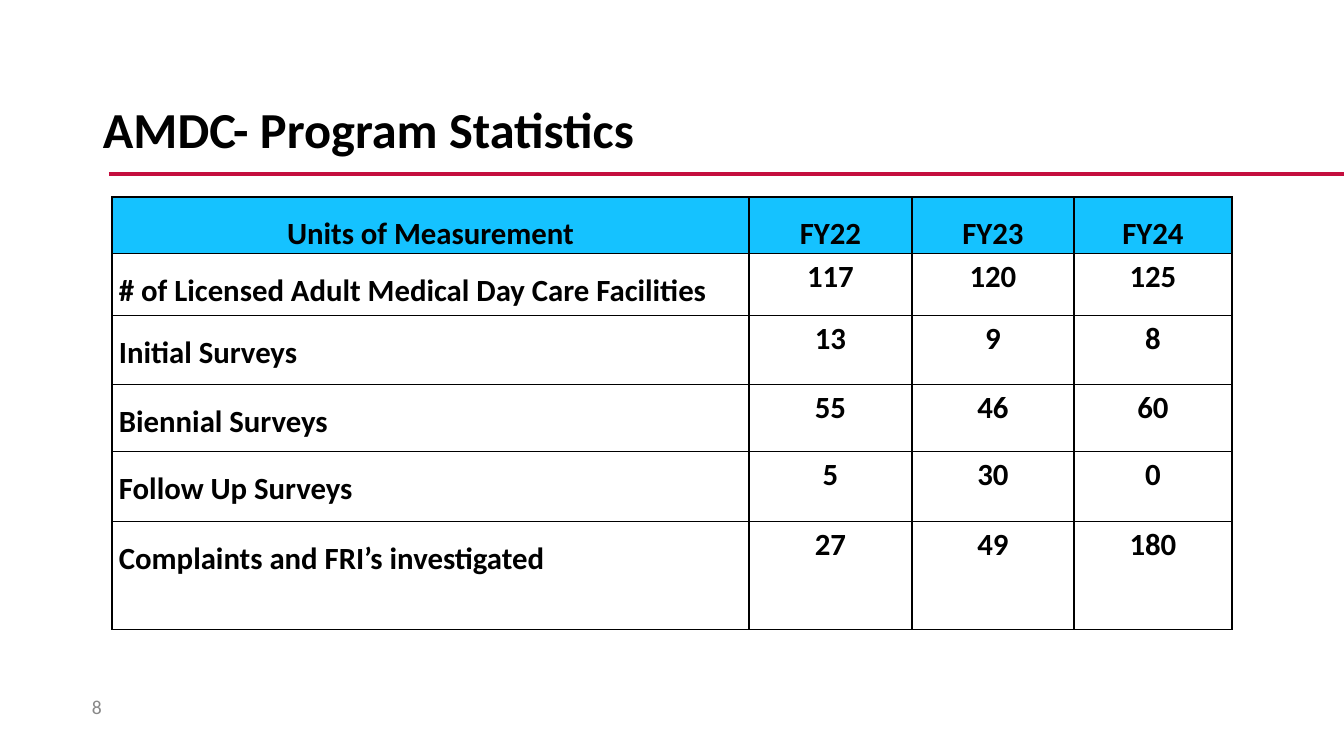
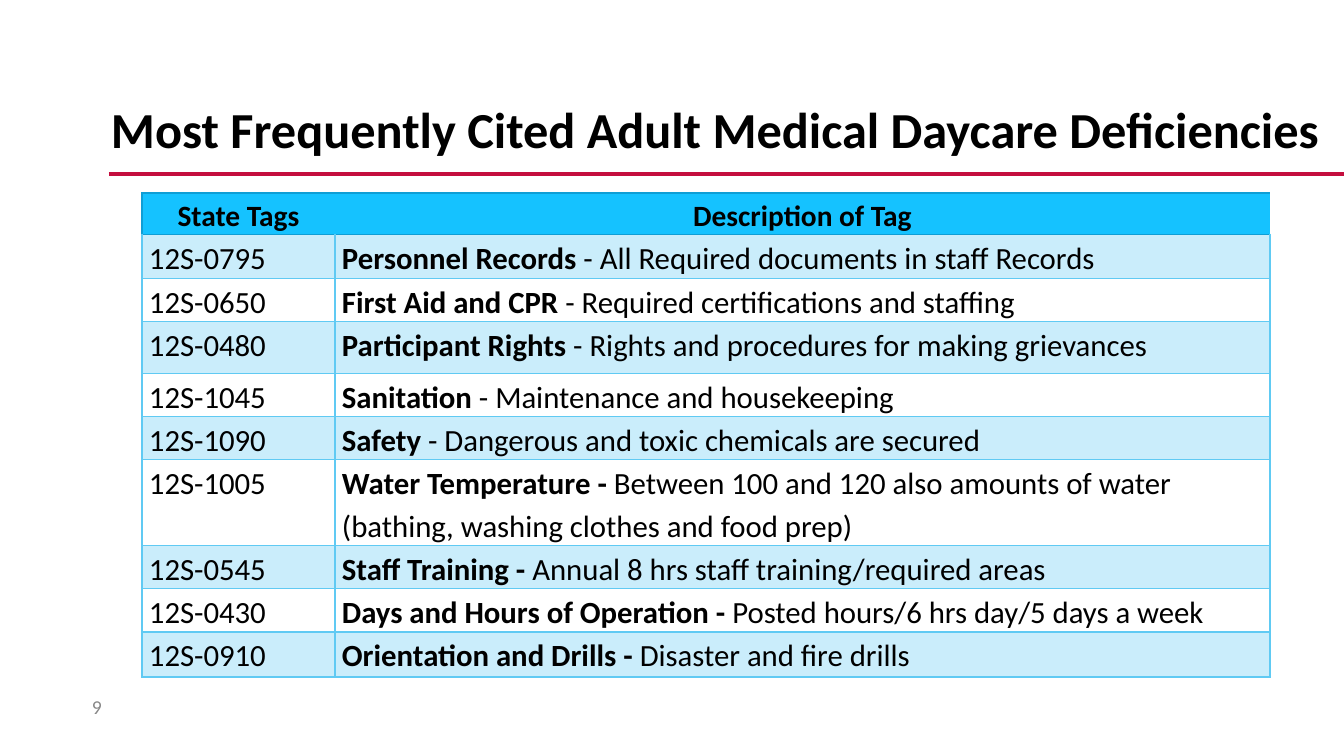
"""Build two slides of adult medical day care figures and deficiencies."""
from dataclasses import dataclass
from lxml.etree import SubElement as Sub
from pptx import Presentation
from pptx.dml.color import RGBColor as RGB
from pptx.enum.shapes import MSO_CONNECTOR as Link
from pptx.enum.text import MSO_ANCHOR as Anchor, MSO_AUTO_SIZE as Fit, PP_ALIGN as Align
from pptx.oxml.ns import qn
from pptx.util import Emu, Pt


@dataclass(frozen=True)
class Theme:
    """Hold the shared colours and type sizes."""
    font: str = "Calibri"
    ink: str = "000000"
    grey: str = "888888"
    red: str = "C40E3E"
    white: str = "FFFFFF"
    head: str = "15C2FF"
    band: str = "CAEDFB"
    edge: str = "60CAF3"
    rim: str = "0F9ED5"
    title: int = 36
    body: int = 22
    label: int = 21
    small: int = 14


THEME = Theme()
WIDE, HIGH = 1344, 756
RULE = (109, 174, WIDE, 174)
FOOT = (82, 687, 49, 40)
SLIM, ROOMY = (7, 0), (10, 5)

STATS = [
    ("Units of Measurement", "FY22", "FY23", "FY24"),
    ("# of Licensed Adult Medical Day Care Facilities", "117", "120", "125"),
    ("Initial Surveys", "13", "9", "8"),
    ("Biennial Surveys", "55", "46", "60"),
    ("Follow Up Surveys", "5", "30", "0"),
    ("Complaints and FRI’s investigated", "27", "49", "180"),
]
TAGS = [
    ("12S-0795", "Personnel Records ", "- All Required documents in staff Records"),
    ("12S-0650", "First Aid and CPR", " - Required certifications and staffing"),
    ("12S-0480", "Participant Rights", " - Rights and procedures for making grievances"),
    ("12S-1045", "Sanitation", " - Maintenance and housekeeping"),
    ("12S-1090", "Safety ", "- Dangerous and toxic chemicals are secured"),
    ("12S-1005", "Water Temperature - ",
     "Between 100 and 120 also amounts of water (bathing, washing clothes and food prep)"),
    ("12S-0545", "Staff Training - ", "Annual 8 hrs staff training/required areas"),
    ("12S-0430", "Days and Hours of Operation - ", "Posted hours/6 hrs day/5 days a week"),
    ("12S-0910", "Orientation and Drills - ", "Disaster and fire drills"),
]
SLIDES = [
    dict(title="AMDC- Program Statistics", box=(93, 77, 1159, 110), num="8",
         cells=[[(text, "") for text in row] for row in STATS],
         at=(112, 197), cols=(637, 163, 162, 158), rows=(56, 62, 69, 67, 70, 108),
         head=THEME.body, space=1.5, figs=True, band=THEME.white,
         edge=THEME.ink, rim=THEME.ink, outer=1.5, open=False),
    dict(title="Most Frequently Cited Adult Medical Daycare Deficiencies",
         box=(101, 77, 1233, 110), num="9",
         cells=[[("State Tags", ""), ("Description of Tag", "")]]
         + [[("", tag), (name, note)] for tag, name, note in TAGS],
         at=(142, 193), cols=(193, 935), rows=(41, 44, 43, 52, 43, 43, 86, 43, 43, 45),
         head=THEME.label, space=1.15, figs=False, band=THEME.band,
         edge=THEME.edge, rim=THEME.rim, outer=1, open=True),
]


def px(num):
    """Turn px into EMU."""
    return Emu(round(num * 914400 / 100.8))


def put(item, **vals):
    """Set attributes from format values."""
    for key, val in vals.items():
        setattr(item, key, val)


def write(para, runs, size, color, align=Align.LEFT, space=None):
    """Fill a paragraph with (text, bold) runs."""
    put(para, alignment=align, line_spacing=space)
    for text, bold in runs:
        if text:
            run = para.add_run()
            run.text = text
            put(run.font, name=THEME.font, size=Pt(size), bold=bold)
            run.font.color.rgb = RGB.from_string(color)


def frame(shape, box, wrap=True):
    """Place a text shape and return its first paragraph."""
    put(shape, **dict(zip(("left", "top", "width", "height"), map(px, box))))
    text = shape.text_frame
    put(text, word_wrap=wrap, auto_size=Fit.NONE, vertical_anchor=Anchor.MIDDLE,
        margin_left=px(10), margin_right=px(10), margin_top=px(5), margin_bottom=px(5))
    return text.paragraphs[0]


def border(cell, row, col, data):
    """Draw the four sides of a table cell."""
    props = cell._tc.get_or_add_tcPr()
    last = len(data["cols"]) - 1
    outer = {"L": col == 0, "R": col == last, "T": row == 0, "B": False}
    for pos, side in enumerate("LRTB"):
        line = Sub(props, qn("a:ln" + side))
        props.insert(pos, line)
        gap = data["open"] and row == 0 and (side == "R" or side == "L" and col > 0)
        if gap:
            Sub(line, qn("a:noFill"))
            continue
        line.set("w", str(Pt(data["outer"] if outer[side] else 1)))
        rim = row == 0 or row == 1 and side == "T"
        fill = Sub(line, qn("a:solidFill"))
        Sub(fill, qn("a:srgbClr")).set("val", data["rim" if rim else "edge"])


def grid(slide, data):
    """Add the table of a slide."""
    cols, rows = data["cols"], data["rows"]
    size = (len(rows), len(cols))
    box = map(px, (*data["at"], sum(cols), sum(rows)))
    table = slide.shapes.add_table(*size, *box).table
    put(table, first_row=False, horz_banding=False)
    for col, wide in zip(table.columns, cols):
        col.width = px(wide)
    for row, high in zip(table.rows, rows):
        row.height = px(high)
    for row, line in enumerate(data["cells"]):
        fill = THEME.head if row == 0 else data["band"] if row % 2 else THEME.white
        for col, (bold, plain) in enumerate(line):
            cell = table.cell(row, col)
            fig = data["figs"] and row > 0 and col > 0
            side, top = map(px, ROOMY if fig else SLIM)
            put(cell, margin_left=side, margin_right=side, margin_top=top, margin_bottom=top)
            cell.fill.solid()
            cell.fill.fore_color.rgb = RGB.from_string(fill)
            border(cell, row, col, data)
            write(cell.text_frame.paragraphs[0], [(bold, True), (plain, False)],
                  THEME.body if row else data["head"], THEME.ink,
                  Align.CENTER if fig or row == 0 else Align.LEFT,
                  None if fig else data["space"])


def base(slide, data):
    """Add the rule, title and slide number."""
    rule = slide.shapes.add_connector(Link.STRAIGHT, *map(px, RULE))
    rule.line.color.rgb = RGB.from_string(THEME.red)
    rule.line.width = Pt(2.25)
    Sub(rule._element.spPr, qn("a:effectLst"))
    head = frame(slide.shapes.title, data["box"])
    write(head, [(data["title"], True)], THEME.title, THEME.ink, space=0.9)
    foot = frame(slide.shapes.add_textbox(*map(px, FOOT)), FOOT)
    write(foot, [(data["num"], False)], THEME.small, THEME.grey)


def main():
    """Build and save the deck."""
    deck = Presentation()
    put(deck, slide_width=px(WIDE), slide_height=px(HIGH))
    for data in SLIDES:
        slide = deck.slides.add_slide(deck.slide_layouts[5])
        base(slide, data)
        grid(slide, data)
    deck.save("out.pptx")


if __name__ == "__main__":
    main()
